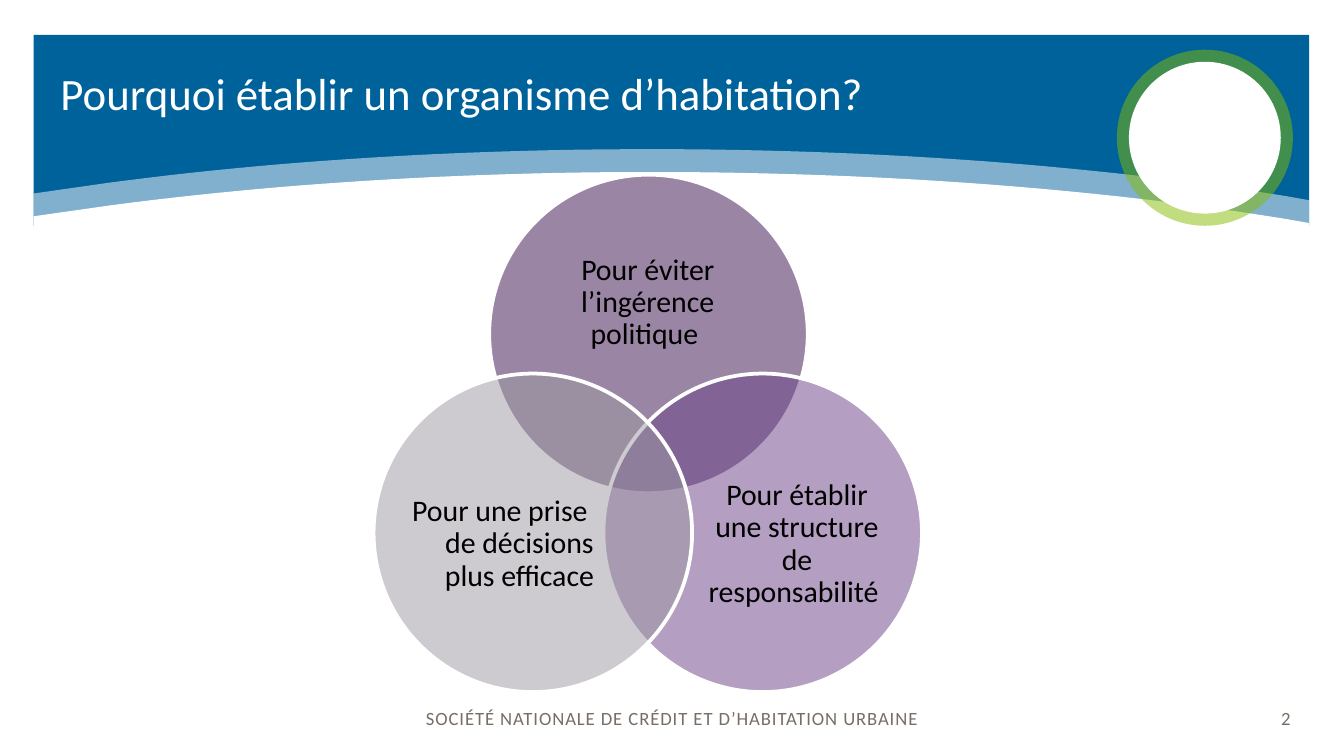
from pptx import Presentation
from pptx.dml.color import RGBColor
from pptx.enum.shapes import MSO_SHAPE
from pptx.enum.text import MSO_ANCHOR, PP_ALIGN
from pptx.oxml.xmlchemy import OxmlElement
from pptx.util import Inches, Pt

COLORS = {
    "white": "FFFFFF", "black": "000000", "blue": "00629B", "green": "84BD00",
    "grey": "776E64", "plum": "360F4B", "purple": "6B4189", "silver": "9D99A1",
}


def write_text(shape, text, size=16, color="black", align=PP_ALIGN.CENTER,
               line_spacing=None, margin=0.0, tracking=None, hanging=None):
    frame = shape.text_frame
    frame.word_wrap = True
    frame.vertical_anchor = MSO_ANCHOR.MIDDLE
    frame.margin_left = frame.margin_right = Inches(margin)
    frame.margin_top = frame.margin_bottom = Inches(margin / 2)
    paragraph = frame.paragraphs[0]
    paragraph.alignment = align
    paragraph.line_spacing = line_spacing
    if hanging:
        properties = paragraph._p.get_or_add_pPr()
        properties.set("marL", str(Inches(hanging)))
        properties.set("indent", str(-Inches(hanging)))
    run = paragraph.add_run()
    run.text = text
    run.font.name = "Calibri"
    run.font.size = Pt(size)
    run.font.bold = False
    run.font.color.rgb = RGBColor.from_string(COLORS[color])
    if tracking:
        run._r.get_or_add_rPr().set("spc", str(int(tracking * 100)))


def paint(shape, color, opacity=100, line_width=None):
    shape.shadow.inherit = False
    shape.fill.solid()
    shape.fill.fore_color.rgb = RGBColor.from_string(COLORS[color])
    if opacity < 100:
        alpha = OxmlElement("a:alpha")
        alpha.set("val", str(opacity * 1000))
        shape.fill._xPr.solidFill.find(".//{*}srgbClr").append(alpha)
    if line_width:
        shape.line.color.rgb = RGBColor.from_string(COLORS["white"])
        shape.line.width = Pt(line_width)
    else:
        shape.line.fill.background()


presentation = Presentation()
presentation.slide_width = Inches(10)
presentation.slide_height = Inches(10) * 9 // 16
slide = presentation.slides.add_slide(presentation.slide_layouts[5])
shapes = slide.shapes

banner = shapes.add_shape(MSO_SHAPE.RECTANGLE, Inches(0.25), Inches(0.26), Inches(9.49), Inches(1.42))
paint(banner, "blue")

ARC_CURVES = [
    [(0.81, 0.25), (2.01, 0.09), (3.38, 0), (4.84, 0)],
    [(4.84, 0), (6.59, 0), (8.22, 0.13), (9.57, 0.35)],
]
STEPS = 24
arc = [(0.25, 0.33)]
for curve in ARC_CURVES:
    for step in range(STEPS + 1):
        t = step / STEPS
        weights = [(1 - t) ** 3, 3 * t * (1 - t) ** 2, 3 * t ** 2 * (1 - t), t ** 3]
        arc.append(tuple(sum(weight * point[axis] for weight, point in zip(weights, curve))
                         for axis in (0, 1)))
arc.append((9.74, 0.38))

for top, opacity in [(1.11, 50), (1.28, 100)]:
    outline = [(Inches(x), Inches(top + y)) for x, y in arc]
    outline += [(Inches(9.74), Inches(1.79)), (Inches(0.25), Inches(1.79))]
    builder = shapes.build_freeform(*outline[0])
    builder.add_line_segments(outline[1:], close=True)
    paint(builder.convert_to_shape(), "white", opacity)

footer = shapes.add_shape(MSO_SHAPE.RECTANGLE, 0, Inches(5.05), Inches(10), Inches(0.58))
paint(footer, "white")
write_text(footer, "SOCIÉTÉ NATIONALE DE CRÉDIT ET D’HABITATION URBAINE", size=10, color="grey", tracking=0.5)

for left, top, diameter, color, opacity in [
    (8.31, 0.37, 1.31, "green", 50),
    (8.4, 0.46, 1.13, "white", 100),
]:
    ring = shapes.add_shape(MSO_SHAPE.OVAL, Inches(left), Inches(top), Inches(diameter), Inches(diameter))
    paint(ring, color, opacity)

title = shapes.title
title.left, title.top, title.width, title.height = Inches(0.35), Inches(0.26), Inches(7.86), Inches(0.89)
write_text(title, "Pourquoi établir un organisme d’habitation?", size=24, color="white",
           align=PP_ALIGN.LEFT, line_spacing=Pt(26), margin=0.1)
shapes._spTree.append(title._element)

page_number = shapes.add_textbox(Inches(9.14), Inches(5.05), Inches(0.56), Inches(0.58))
write_text(page_number, "2", size=10, color="grey", align=PP_ALIGN.RIGHT, margin=0.1, tracking=0.5)

DIAMETER = 2.37
REASONS = [
    (3.64, 1.3, "plum", (3.95, 1.72, 1.74, 1.07), "Pour éviter l’ingérence politique ", None),
    (4.49, 2.78, "purple", (5.22, 3.4, 1.42, 1.3), "Pour établir une structure de responsabilité ", None),
    (2.78, 2.78, "silver", (3.01, 3.4, 1.42, 1.3), "Pour une prise de décisions plus efficace ", 0.29),
]
for left, top, color, label_box, reason, hanging in REASONS:
    circle = shapes.add_shape(MSO_SHAPE.OVAL, Inches(left), Inches(top), Inches(DIAMETER), Inches(DIAMETER))
    paint(circle, color, opacity=50, line_width=2)
    label = shapes.add_textbox(*[Inches(length) for length in label_box])
    write_text(label, reason, line_spacing=0.9, hanging=hanging)

presentation.save("out.pptx")
